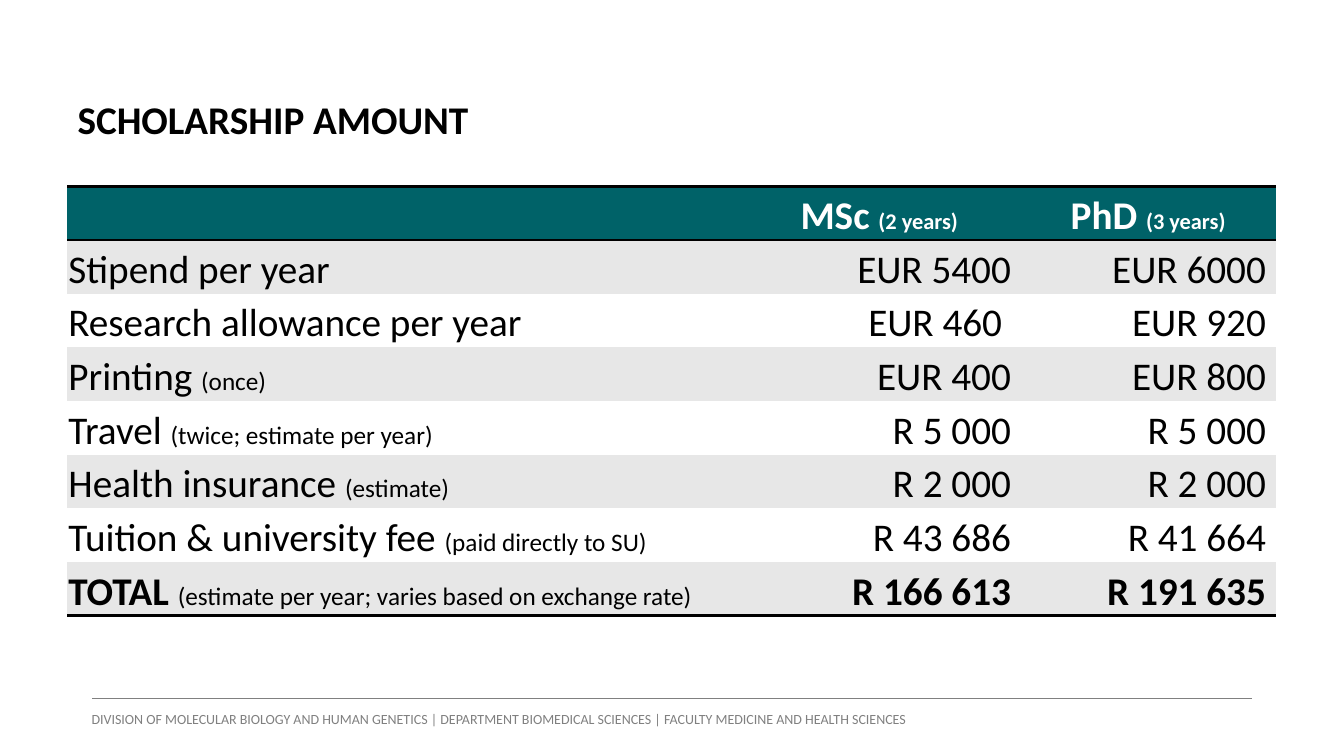
from pptx import Presentation
from pptx.dml.color import RGBColor
from pptx.enum.shapes import MSO_CONNECTOR
from pptx.enum.text import MSO_ANCHOR, MSO_AUTO_SIZE, PP_ALIGN
from pptx.oxml import parse_xml
from pptx.oxml.ns import nsdecls, qn
from pptx.util import Pt

COLORS = {
    "black": "000000",
    "white": "FFFFFF",
    "teal": "006268",
    "band": "E7E7E7",
    "gray": "808080",
}
NO_TABLE_STYLE = "{2D5ABB26-0587-4C30-8999-92F81FD0307C}"
SPACE_WIDTH = 6.3

# Each row: label, note, MSc amount, PhD amount
SCHOLARSHIP_ROWS = [
    ("Stipend per year", "", "EUR 5400", "EUR 6000"),
    ("Research allowance per year", "", "EUR 460", "EUR 920"),
    ("Printing", "(once)", "EUR 400", "EUR 800"),
    ("Travel", "(twice; estimate per year)", "R 5 000", "R 5 000"),
    ("Health insurance", "(estimate)", "R 2 000", "R 2 000"),
    ("Tuition & university fee", "(paid directly to SU)", "R 43 686", "R 41 664"),
    ("TOTAL", "(estimate per year; varies based on exchange rate)", "R 166 613", "R 191 635"),
]


class SlideBuilder:
    def __init__(self, slide, font_name):
        self.slide = slide
        self.font_name = font_name

    def color(self, name):
        return RGBColor.from_string(COLORS[name])

    def add_run(self, paragraph, text, size, color="black", bold=False):
        run = paragraph.add_run()
        run.text = text
        font_format = {"name": self.font_name, "size": Pt(size), "bold": bold}
        for attribute, value in font_format.items():
            setattr(run.font, attribute, value)
        run.font.color.rgb = self.color(color)

    def place(self, shape, left, top, width, height):
        box = {"left": left, "top": top, "width": width, "height": height}
        for attribute, value in box.items():
            setattr(shape, attribute, Pt(value))

    def title(self, text, box, size):
        shape = self.slide.shapes.title
        self.place(shape, *box)
        frame = shape.text_frame
        frame_format = {
            "vertical_anchor": MSO_ANCHOR.TOP,
            "auto_size": MSO_AUTO_SIZE.NONE,
            "word_wrap": True,
        }
        for attribute, value in frame_format.items():
            setattr(frame, attribute, value)
        paragraph = frame.paragraphs[0]
        paragraph.alignment = PP_ALIGN.LEFT
        paragraph.line_spacing = 0.9
        self.add_run(paragraph, text, size, bold=True)

    def text(self, text, box, size, color):
        shape = self.slide.shapes.add_textbox(*map(Pt, box))
        shape.text_frame.word_wrap = True
        shape.text_frame.auto_size = MSO_AUTO_SIZE.SHAPE_TO_FIT_TEXT
        self.add_run(shape.text_frame.paragraphs[0], text, size, color)

    def rule(self, left, right, top, color):
        line = self.slide.shapes.add_connector(
            MSO_CONNECTOR.STRAIGHT, Pt(left), Pt(top), Pt(right), Pt(top))
        line.line.color.rgb = self.color(color)
        line.line.width = Pt(1)
        line.element.spPr.append(parse_xml(f"<a:effectLst {nsdecls('a')}/>"))

    def table(self, box, column_widths, row_count):
        """Add an unstyled table with equal row heights."""
        frame = self.slide.shapes.add_table(row_count, len(column_widths), *map(Pt, box))
        frame.element.find(".//" + qn("a:tableStyleId")).text = NO_TABLE_STYLE
        table = frame.table
        table.first_row = table.horz_banding = False
        for column, width in zip(table.columns, column_widths):
            column.width = Pt(width)
        return table

    def cell(self, cell, runs, fill, alignment=PP_ALIGN.LEFT, right=0.7, borders=()):
        """Fill a cell with runs of (text, size, color, bold); borders are tag names."""
        cell_format = {
            "margin_left": Pt(0.7),
            "margin_right": Pt(right),
            "margin_top": Pt(0.7),
            "margin_bottom": Pt(0),
            "vertical_anchor": MSO_ANCHOR.BOTTOM,
        }
        for attribute, value in cell_format.items():
            setattr(cell, attribute, value)
        cell.fill.solid()
        cell.fill.fore_color.rgb = self.color(fill)
        properties = cell._tc.get_or_add_tcPr()
        for position, tag in enumerate(borders):
            properties.insert(position, parse_xml(
                f'<a:{tag} {nsdecls("a")} w="{Pt(2)}"><a:solidFill>'
                f'<a:srgbClr val="{COLORS["black"]}"/></a:solidFill></a:{tag}>'))
        paragraph = cell.text_frame.paragraphs[0]
        paragraph.alignment = alignment
        for run in runs:
            self.add_run(paragraph, *run)


def fill_scholarship_table(builder, table):
    headings = [None, ("MSc ", "(2 years)"), ("PhD ", "(3 years)")]
    for column, heading in enumerate(headings):
        runs = []
        if heading:
            runs = [(text, size, "white", True) for text, size in zip(heading, (28, 16))]
        builder.cell(table.cell(0, column), runs, "teal", PP_ALIGN.CENTER,
                     borders=("lnT", "lnB"))

    for row, (label, note, *amounts) in enumerate(SCHOLARSHIP_ROWS, start=1):
        is_total = label == "TOTAL"
        fill = "band" if row % 2 else "white"
        borders = ("lnB",) if is_total else ()
        runs = [(label + " " if note else label, 28, "black", is_total)]
        if note:
            runs.append((note, 18, "black", False))
        builder.cell(table.cell(row, 0), runs, fill, borders=borders)
        for column, amount in enumerate(amounts, start=1):
            spaces = 2 if amount == "EUR 460" else 1
            builder.cell(table.cell(row, column), [(amount, 28, "black", is_total)], fill,
                         PP_ALIGN.RIGHT, 0.7 + spaces * SPACE_WIDTH, borders)


def main():
    presentation = Presentation()
    presentation.slide_width = Pt(960)
    presentation.slide_height = Pt(540)
    slide = presentation.slides.add_slide(presentation.slide_layouts[5])
    builder = SlideBuilder(slide, "Calibri")

    builder.rule(66, 894, 499, "gray")
    builder.text("DIVISION OF MOLECULAR BIOLOGY AND HUMAN GENETICS | "
                 "DEPARTMENT BIOMEDICAL SCIENCES | FACULTY MEDICINE AND HEALTH SCIENCES",
                 (58.3, 504, 695.5, 19.4), 10, "gray")
    builder.title("SCHOLARSHIP AMOUNT", (48.2, 68.4, 828, 104.4), 28)
    table = builder.table((48.2, 133.2, 863, 306.8), (478.8, 202.1, 182.1),
                          len(SCHOLARSHIP_ROWS) + 1)
    fill_scholarship_table(builder, table)

    presentation.save("out.pptx")


if __name__ == "__main__":
    main()
